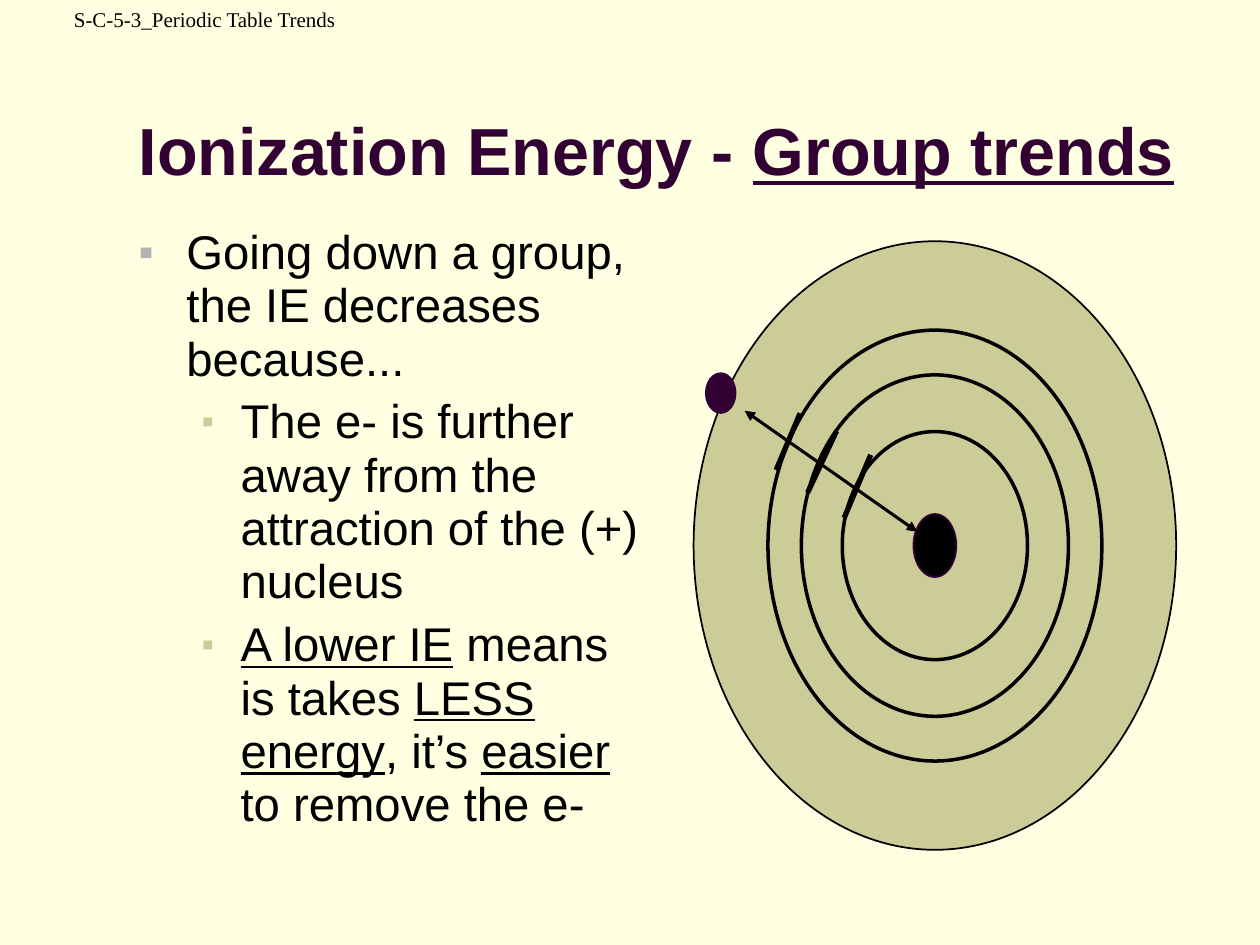
from dataclasses import dataclass

from lxml import etree
from pptx import Presentation
from pptx import util as u
from pptx.dml.color import RGBColor
from pptx.enum import shapes, text
from pptx.oxml import ns


@dataclass(frozen=True)
class Theme:
    paper: str = "FFFFE1"
    ink: str = "000000"
    plum: str = "330033"
    olive: str = "CCCC99"
    grey: str = "B2B2B2"
    sans: str = "Arial"
    serif: str = "Times New Roman"
    title: float = 38
    body: float = 27
    header: float = 12


T = Theme()

# Runs are (text, underlined)
HEADER = [("S-C-5-3_Periodic Table Trends", False)]
TITLE = [("Ionization Energy - ", False), ("Group trends", True)]
BODY = [
    (0, [("Going down a group, the IE decreases because...", False)]),
    (1, [("The e- is further away from the attraction of the (+) nucleus", False)]),
    (1, [("A lower IE", True), (" means is takes ", False), ("LESS energy", True),
         (", it’s ", False), ("easier", True), (" to remove the e-", False)]),
]
# Per level: left margin and hanging indent, bullet colour, bullet size in percent
LEVELS = [(0.38, 0.38, T.grey, 90), (0.81, 0.31, T.olive, 75)]

NUCLEUS = (7.42, 4.33)
ELECTRON = (5.72, 3.12)
# Centre, size, fill, line colour, line width
ELLIPSES = [
    (NUCLEUS, (3.83, 4.83), T.olive, T.ink, 1),
    (NUCLEUS, (1.47, 1.81), None, T.ink, 2),
    (NUCLEUS, (2.12, 2.71), None, T.ink, 2),
    (NUCLEUS, (2.65, 3.42), None, T.ink, 2),
    (NUCLEUS, (0.34, 0.50), T.ink, T.plum, 1),
    (ELECTRON, (0.25, 0.33), T.plum, None, 0),
]
# From, to, width, arrowheads
LINES = [
    ((7.28, 4.22), (5.91, 3.26), 1.75, True),
    ((6.91, 3.61), (6.70, 4.11), 3, False),
    ((6.64, 3.42), (6.41, 3.91), 3, False),
    ((6.35, 3.28), (6.16, 3.73), 3, False),
]


def rgb(value):
    return RGBColor.from_string(value)


def sub(parent, tag, **attrs):
    return etree.SubElement(parent, ns.qn(tag), attrs)


def place(sp, left, top, width, height):
    sp.left, sp.top = u.Inches(left), u.Inches(top)
    sp.width, sp.height = u.Inches(width), u.Inches(height)


def frame(sp, anchor):
    tf = sp.text_frame
    tf.word_wrap = True
    tf.auto_size = text.MSO_AUTO_SIZE.NONE
    tf.vertical_anchor = anchor
    return tf


def add_runs(p, runs, font, size, color, bold=False):
    for words, underlined in runs:
        r = p.add_run()
        r.text = words
        r.font.name, r.font.size = font, u.Pt(size)
        r.font.color.rgb = rgb(color)
        r.font.bold, r.font.underline = bold, underlined


def add_bullet(p, level):
    margin, hang, color, percent = LEVELS[level]
    p.level = level
    pPr = p._p.get_or_add_pPr()
    pPr.set("marL", str(u.Inches(margin)))
    pPr.set("indent", str(-u.Inches(hang)))
    sub(sub(pPr, "a:buClr"), "a:srgbClr", val=color)
    sub(pPr, "a:buSzPct", val=str(percent * 1000))
    sub(pPr, "a:buFont", typeface=T.sans)
    sub(pPr, "a:buChar", char="▪")


def add_ellipse(group, center, size, fill, line, width):
    (x, y), (w, h) = center, size
    sp = group.shapes.add_shape(shapes.MSO_SHAPE.OVAL, 0, 0, 0, 0)
    place(sp, x - w / 2, y - h / 2, w, h)
    sp.shadow.inherit = False
    if fill:
        sp.fill.solid()
        sp.fill.fore_color.rgb = rgb(fill)
    else:
        sp.fill.background()
    if line:
        sp.line.color.rgb = rgb(line)
        sp.line.width = u.Pt(width)
    else:
        sp.line.fill.background()


def add_line(group, start, end, width, arrows):
    ends = [u.Inches(v) for v in (*start, *end)]
    c = group.shapes.add_connector(shapes.MSO_CONNECTOR.STRAIGHT, *ends)
    c.line.color.rgb = rgb(T.ink)
    c.line.width = u.Pt(width)
    if arrows:
        for tag in ("a:headEnd", "a:tailEnd"):
            sub(c.line._get_or_add_ln(), tag, type="triangle")
    sub(c._element.spPr, "a:effectLst")


def main():
    prs = Presentation()
    prs.slide_width, prs.slide_height = u.Inches(10), u.Inches(7.5)
    s = prs.slides.add_slide(prs.slide_layouts[1])
    s.background.fill.solid()
    s.background.fill.fore_color.rgb = rgb(T.paper)
    title, body = s.placeholders

    place(title, 1, 0.3, 8.5, 1.25)
    p = frame(title, text.MSO_ANCHOR.BOTTOM).paragraphs[0]
    p.alignment = text.PP_ALIGN.LEFT
    add_runs(p, TITLE, T.sans, T.title, T.plum, bold=True)

    place(body, 1, 1.75, 4.17, 4.95)
    tf = frame(body, text.MSO_ANCHOR.TOP)
    for i, (level, runs) in enumerate(BODY):
        p = tf.add_paragraph() if i else tf.paragraphs[0]
        p.line_spacing = 0.94
        p.space_before = u.Pt(0.2 * T.body)
        add_bullet(p, level)
        add_runs(p, runs, T.sans, T.body, T.ink)

    atom = s.shapes.add_group_shape()
    for ellipse in ELLIPSES:
        add_ellipse(atom, *ellipse)
    for line in LINES:
        add_line(atom, *line)

    header = s.shapes.add_textbox(0, 0, u.Inches(3.25), u.Inches(0.5))
    p = frame(header, text.MSO_ANCHOR.TOP).paragraphs[0]
    p.alignment = text.PP_ALIGN.CENTER
    add_runs(p, HEADER, T.serif, T.header, T.ink)

    prs.save("out.pptx")


if __name__ == "__main__":
    main()
